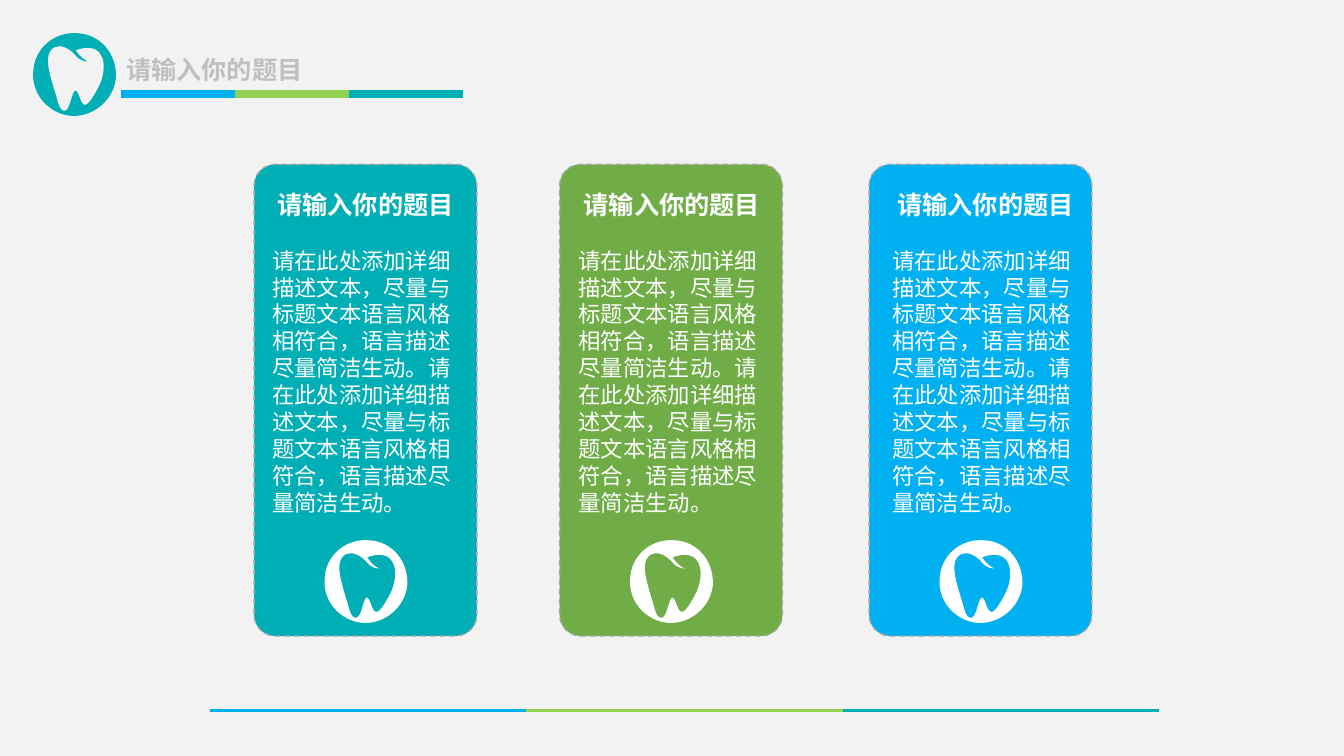
from lxml.etree import SubElement
from pptx import Presentation
from pptx.dml.color import RGBColor
from pptx.enum.dml import MSO_LINE
from pptx.enum.shapes import MSO_CONNECTOR, MSO_SHAPE
from pptx.enum.text import MSO_AUTO_SIZE as AutoSize, PP_ALIGN as Align
from pptx.oxml.ns import qn
from pptx.util import Inches, Pt

# Content
HEADING = "请输入你的题目"
SENTENCE = "请在此处添加详细描述文本，尽量与标题文本语言风格相符合，语言描述尽量简洁生动。"
BODY = SENTENCE * 2
FONT = "Noto Sans CJK SC"
COLORS = {
    "background": "F2F2F2", "blue": "00B0F0", "lime": "92D050", "teal": "00AEB6",
    "green": "70AD47", "gray": "BFBFBF", "border": "A6A6A6", "white": "FFFFFF",
}
PAGE_WIDTH, PAGE_HEIGHT = 13.33, 7.5
CARDS = [  # card left, text left, fill
    (2.52, 2.52, "teal"),
    (5.55, 5.56, "green"),
    (8.62, 8.67, "blue"),
]
STRIPES = [  # left, y, segment length, weight in points
    (2.08, 7.05, 3.14, 2.25),
    (1.20, 0.93, 1.13, 6),
]
STRIPE_COLORS = ["blue", "lime", "teal"]
CARD_TOP, CARD_WIDTH, CARD_HEIGHT = 1.63, 2.21, 4.68
ICON_INSET = 0.70

# Icon outlines in hundredths of an inch: start, then cubic curves
TOOTH = ((25, 13), [
    ((22, 13), (20, 14), (18, 16)),
    ((10, 24), (18, 46), (21, 57)),
    ((24, 65), (25, 77), (31, 77)),
    ((37, 77), (38, 57), (42, 57)),
    ((45, 57), (47, 71), (51, 71)),
    ((55, 72), (62, 59), (66, 51)),
    ((70, 42), (72, 29), (67, 21)),
    ((62, 12), (49, 14), (42, 17)),
    ((44, 19), (46, 24), (54, 28)),
    ((53, 28), (47, 28), (42, 22)),
    ((39, 18), (31, 12), (25, 13)),
])
DISC = ((44, 0), [
    ((67, 1), (83, 21), (82, 44)),
    ((80, 66), (60, 83), (38, 82)),
    ((15, 80), (-2, 60), (0, 38)),
    ((1, 15), (21, -2), (44, 0)),
])


def color(name):
    return RGBColor.from_string(COLORS[name])


def paint(shape, fill):
    shape.shadow.inherit = False
    shape.fill.solid()
    shape.fill.fore_color.rgb = color(fill)
    shape.line.fill.background()


def to_emu(point):
    return tuple(Inches(value / 100) for value in point)


def add_tooth_icon(slide, left, top, fill):
    outlines = (TOOTH, DISC)
    builder = slide.shapes.build_freeform(*to_emu(TOOTH[0]))
    for start, curves in outlines:
        if start != TOOTH[0]:
            builder.move_to(*to_emu(start))
        builder.add_line_segments([to_emu(curve[-1]) for curve in curves], close=True)
    icon = builder.convert_to_shape(Inches(left), Inches(top))
    paint(icon, fill)
    # Turn each straight segment into its cubic curve
    segments = list(icon._element.iter(qn("a:lnTo")))
    curves = [curve for outline in outlines for curve in outline[1]]
    for segment, curve in zip(segments, curves):
        bezier = segment.makeelement(qn("a:cubicBezTo"))
        for point in curve:
            x, y = to_emu(point)
            SubElement(bezier, qn("a:pt"), x=str(int(x)), y=str(int(y)))
        segment.getparent().replace(segment, bezier)


def add_stripe(slide, left, y, length, weight):
    for i, name in enumerate(STRIPE_COLORS):
        x = left + i * length
        segment = slide.shapes.add_connector(
            MSO_CONNECTOR.STRAIGHT, Inches(x), Inches(y), Inches(x + length), Inches(y))
        segment.line.color.rgb = color(name)
        segment.line.width = Pt(weight)
        SubElement(segment._element.spPr, qn("a:effectLst"))


def add_text(slide, text, left, top, width, height, size, name, heading=False):
    box = slide.shapes.add_textbox(Inches(left), Inches(top), Inches(width), Inches(height))
    frame = box.text_frame
    frame.word_wrap = True
    frame.auto_size = AutoSize.SHAPE_TO_FIT_TEXT
    para = frame.paragraphs[0]
    para.text = text
    para.alignment = Align.CENTER if heading else Align.LEFT
    font = para.font
    font.name, font.size, font.bold = FONT, Pt(size), heading
    font.color.rgb = color(name)
    # East Asian typeface
    properties = para._p.pPr.find(qn("a:defRPr"))
    SubElement(properties, qn("a:ea")).set("typeface", FONT)


def add_card(slide, left, text_left, fill):
    card = slide.shapes.add_shape(
        MSO_SHAPE.ROUNDED_RECTANGLE, Inches(left), Inches(CARD_TOP),
        Inches(CARD_WIDTH), Inches(CARD_HEIGHT))
    card.adjustments[0] = 0.095
    paint(card, fill)
    card.line.color.rgb = color("border")
    card.line.width = Pt(1)
    card.line.dash_style = MSO_LINE.DASH
    add_text(slide, HEADING, text_left, 1.83, CARD_WIDTH, 0.4, 18, "white", heading=True)
    add_text(slide, BODY, text_left + 0.08, 2.4, 2.05, 3.06, 16, "white")
    add_tooth_icon(slide, left + ICON_INSET, 5.36, "white")


def main():
    deck = Presentation()
    deck.slide_width, deck.slide_height = Inches(PAGE_WIDTH), Inches(PAGE_HEIGHT)
    page = deck.slides.add_slide(deck.slide_layouts[6])

    # Backdrop
    backdrop = page.shapes.add_shape(
        MSO_SHAPE.RECTANGLE, 0, 0, deck.slide_width, deck.slide_height)
    paint(backdrop, "background")

    # Footer and header stripes
    for stripe in STRIPES:
        add_stripe(page, *stripe)

    # Header icon and title
    add_tooth_icon(page, 0.33, 0.33, "teal")
    add_text(page, HEADING, 1.14, 0.49, 1.97, 0.4, 18, "gray", heading=True)

    # Three text cards
    for card in CARDS:
        add_card(page, *card)

    deck.save("out.pptx")


if __name__ == "__main__":
    main()
